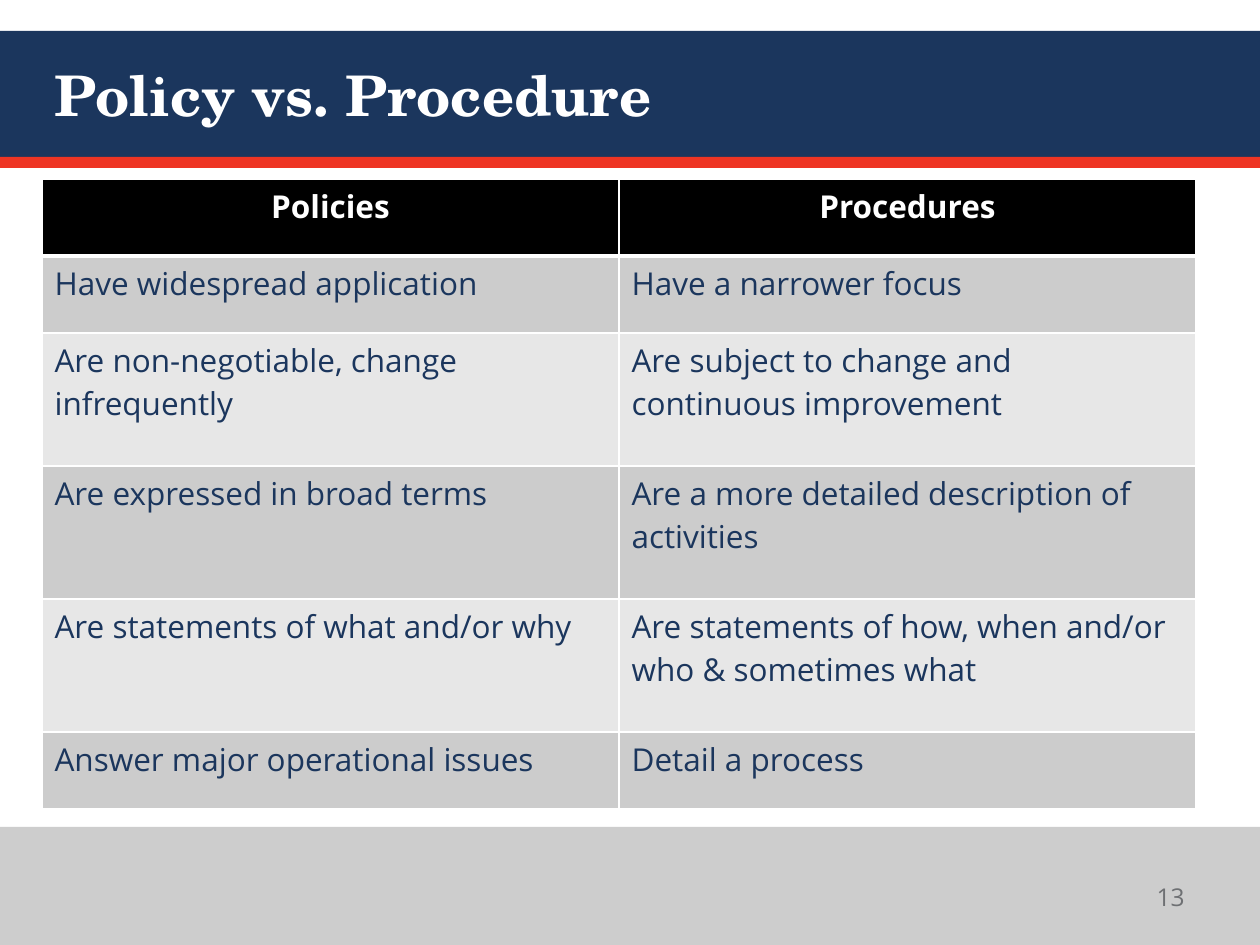
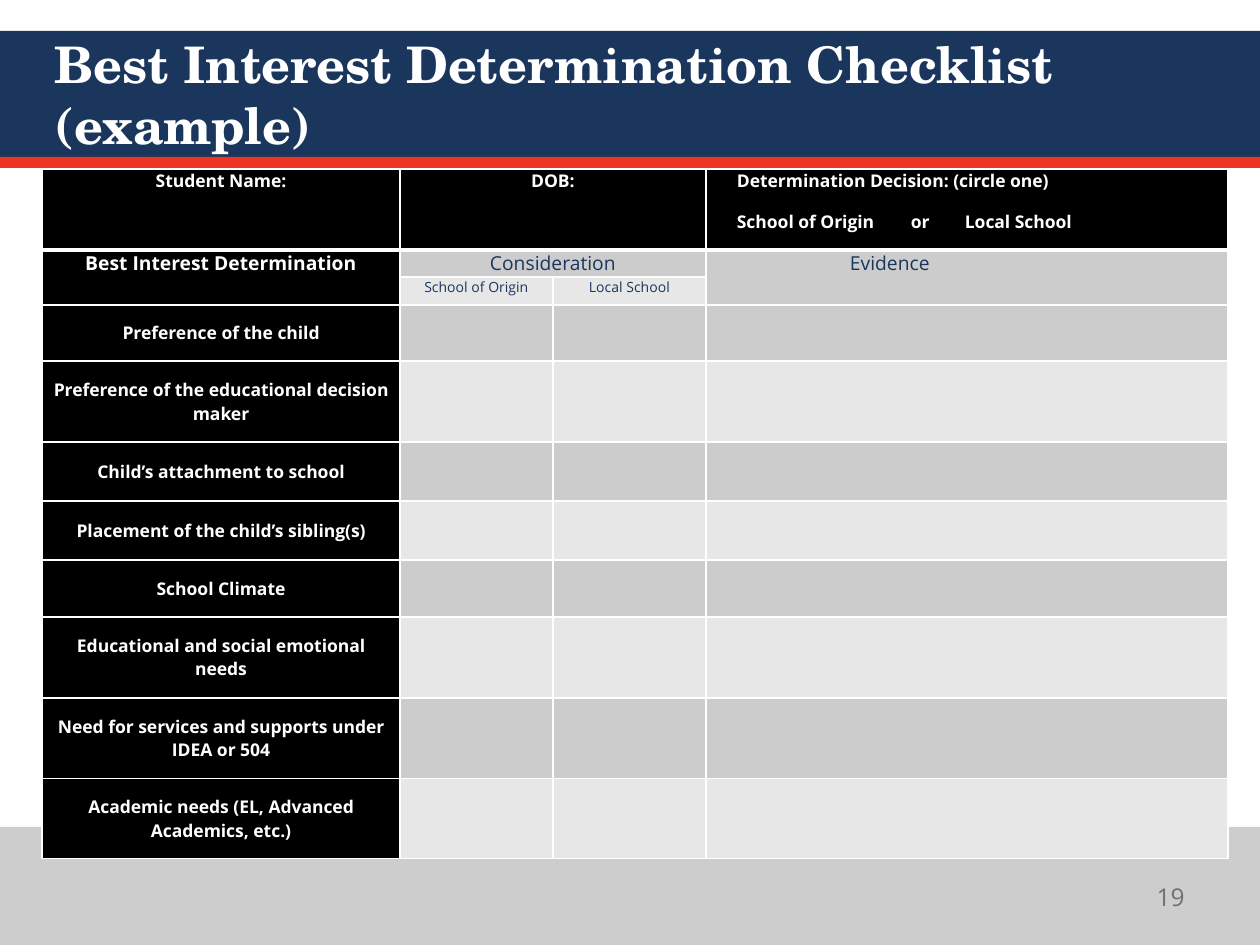
from dataclasses import dataclass

from lxml.etree import SubElement
from pptx import Presentation
from pptx.dml.color import RGBColor
from pptx.enum.shapes import MSO_SHAPE
from pptx.enum.text import MSO_ANCHOR, MSO_AUTO_SIZE, PP_ALIGN
from pptx.oxml.ns import qn
from pptx.util import Pt

# ---- Content ----
POLICY_TITLE = "Policy vs. Procedure"
POLICY_ROWS = [
    ("Policies", "Procedures"),
    ("Have widespread application", "Have a narrower focus"),
    ("Are non-negotiable, change infrequently",
     "Are subject to change and continuous improvement"),
    ("Are expressed in broad terms", "Are a more detailed description of activities"),
    ("Are statements of what and/or why",
     "Are statements of how, when and/or who & sometimes what"),
    ("Answer major operational issues", "Detail a process"),
]
CHECKLIST_TITLE = "Best Interest Determination Checklist (example)"
STUDENT_FIELDS = {0: "Student Name:", 1: "DOB:"}
DECISION_LINES = ["Determination Decision: (circle one)",
                  "School of Origin\tor\tLocal School"]
CRITERIA_HEADING = "Best Interest Determination"
CONSIDERATION_HEADING = "Consideration"
EVIDENCE_HEADING = "Evidence"
SCHOOLS = ["School of Origin", "Local School"]
CRITERIA = [
    "Preference of the child",
    "Preference of the educational decision maker",
    "Child’s attachment to school",
    "Placement of the child’s sibling(s)",
    "School Climate",
    "Educational and social emotional needs",
    "Need for services and supports under IDEA or 504",
    "Academic needs (EL, Advanced Academics, etc.)",
]


# ---- Theme and layout, lengths in px ----
@dataclass(frozen=True)
class Theme:
    navy: str = "1B365D"
    red: str = "EE3524"
    footer_gray: str = "CDCDCD"
    number_gray: str = "6E7073"
    black: str = "000000"
    white: str = "FFFFFF"
    row_dark: str = "CCCCCC"
    row_light: str = "E7E7E7"
    title_font: str = "TeX Gyre Schola"
    body_font: str = "Open Sans"
    title_size: float = 32
    long_title_size: float = 28.8
    number_size: float = 14
    table_size: float = 18
    heading_size: float = 11
    label_size: float = 10
    school_size: float = 8
    border: float = 1
    header_border: float = 3


THEME = Theme()
PX_PER_INCH = 126
SLIDE_WIDTH, SLIDE_HEIGHT = 1260, 945
BANDS = [(31, 126, THEME.navy), (827, 118, THEME.footer_gray), (157, 11, THEME.red)]
TITLE_BOX = (42, 31, 1144, 126)
NUMBER_BOX = (1134, 876, 63, 50)
POLICY_WIDTHS = [577, 577]
POLICY_HEIGHTS = [77, 77, 133, 133, 133, 77]
CHECKLIST_WIDTHS = [358, 153, 153, 522]
CHECKLIST_HEIGHTS = [81, 27, 28, 56, 81, 59, 59, 57, 81, 81, 80]
CELL_MARGIN = 8
DECISION_INDENT, EVIDENCE_INDENT = 31, 144
DECISION_TABS = [174, 228]


def px(length):
    return round(length * 914400 / PX_PER_INCH)


def place(shape, box):
    shape.left, shape.top, shape.width, shape.height = map(px, box)


def set_font(paragraph, size, color, bold=False, name=THEME.body_font):
    font = paragraph.font
    font.size, font.bold, font.name = Pt(size), bold, name
    font.color.rgb = RGBColor.from_string(color)


# ---- Shared slide parts ----
def add_bands(slide, layout):
    """Draw the bands and move them behind everything on the layout."""
    for index, (top, height, color) in enumerate(BANDS):
        band = slide.shapes.add_shape(
            MSO_SHAPE.RECTANGLE, 0, px(top), px(SLIDE_WIDTH), px(height))
        band.shadow.inherit = False
        band.fill.solid()
        band.fill.fore_color.rgb = RGBColor.from_string(color)
        band.line.fill.background()
        layout.shapes.element.insert(2 + index, band.element)


def add_slide(presentation, layout, title, title_size, number):
    slide = presentation.slides.add_slide(layout)
    shape = slide.shapes.title
    place(shape, TITLE_BOX)
    frame = shape.text_frame
    frame.text = title
    frame.word_wrap = True
    frame.auto_size = MSO_AUTO_SIZE.NONE
    frame.vertical_anchor = MSO_ANCHOR.MIDDLE
    paragraph = frame.paragraphs[0]
    paragraph.alignment = PP_ALIGN.LEFT
    set_font(paragraph, title_size, THEME.white, True, THEME.title_font)

    number_box = slide.shapes.add_textbox(*map(px, NUMBER_BOX))
    number_box.text_frame.word_wrap = True
    paragraph = number_box.text_frame.paragraphs[0]
    paragraph.text = str(number)
    paragraph.alignment = PP_ALIGN.RIGHT
    set_font(paragraph, THEME.number_size, THEME.number_gray)
    return slide


# ---- Tables ----
def set_borders(cell, top, bottom):
    properties = cell._tc.get_or_add_tcPr()
    widths = {"a:lnL": THEME.border, "a:lnR": THEME.border, "a:lnT": top, "a:lnB": bottom}
    for tag, width in widths.items():
        line = SubElement(properties, qn(tag), w=str(Pt(width)))
        fill = SubElement(line, qn("a:solidFill"))
        SubElement(fill, qn("a:srgbClr"), val=THEME.white)


def add_table(slide, left, top, widths, heights, black_columns=0):
    """Add a table with a black header row, banded rows and white borders."""
    table = slide.shapes.add_table(
        len(heights), len(widths), px(left), px(top), px(sum(widths)), px(sum(heights))).table
    table.first_row = table.horz_banding = False
    for column, width in zip(table.columns, widths):
        column.width = px(width)
    for row_index, (row, height) in enumerate(zip(table.rows, heights)):
        row.height = px(height)
        band = THEME.row_dark if row_index % 2 else THEME.row_light
        for column_index, cell in enumerate(row.cells):
            set_borders(cell,
                        THEME.header_border if row_index == 1 else THEME.border,
                        THEME.header_border if row_index == 0 else THEME.border)
            black = row_index == 0 or column_index < black_columns
            cell.fill.solid()
            cell.fill.fore_color.rgb = RGBColor.from_string(THEME.black if black else band)
    return table


def write_cell(cell, text, size, header=False, alignment=PP_ALIGN.CENTER):
    paragraph = cell.text_frame.paragraphs[0]
    paragraph.text = text
    paragraph.alignment = alignment
    set_font(paragraph, size, THEME.white if header else THEME.navy, header)


def write_decision(cell):
    cell.margin_left = px(DECISION_INDENT)
    frame = cell.text_frame
    for index, text in enumerate(DECISION_LINES):
        paragraph = frame.add_paragraph() if index else frame.paragraphs[0]
        paragraph.text = text
        paragraph.alignment = PP_ALIGN.LEFT
        if index:
            paragraph.space_before = Pt(10)
        if "\t" in text:
            tabs = SubElement(paragraph._p.get_or_add_pPr(), qn("a:tabLst"))
            for stop in DECISION_TABS:
                SubElement(tabs, qn("a:tab"), pos=str(px(stop)), algn="l")
        set_font(paragraph, THEME.label_size, THEME.white, True)


def fill_policy_table(slide):
    table = add_table(slide, 42, 179, POLICY_WIDTHS, POLICY_HEIGHTS)
    for row_index, texts in enumerate(POLICY_ROWS):
        header = row_index == 0
        for column_index, text in enumerate(texts):
            write_cell(table.cell(row_index, column_index), text, THEME.table_size, header,
                       PP_ALIGN.CENTER if header else PP_ALIGN.LEFT)


def fill_checklist_table(slide):
    table = add_table(slide, 42, 169, CHECKLIST_WIDTHS, CHECKLIST_HEIGHTS, black_columns=1)
    for cell in table.iter_cells():
        cell.margin_left = cell.margin_right = px(CELL_MARGIN)
        cell.margin_top = cell.margin_bottom = 0
    for start, end in [((0, 1), (0, 2)), ((1, 0), (2, 0)), ((1, 1), (1, 2)), ((1, 3), (2, 3))]:
        table.cell(*start).merge(table.cell(*end))

    # Student details and headings
    for column, text in STUDENT_FIELDS.items():
        write_cell(table.cell(0, column), text, THEME.label_size, True)
    write_decision(table.cell(0, 3))
    write_cell(table.cell(1, 0), CRITERIA_HEADING, THEME.heading_size, True)
    write_cell(table.cell(1, 1), CONSIDERATION_HEADING, THEME.heading_size)
    evidence = table.cell(1, 3)
    evidence.margin_left = px(EVIDENCE_INDENT)
    write_cell(evidence, EVIDENCE_HEADING, THEME.heading_size, alignment=PP_ALIGN.LEFT)
    for column, school in enumerate(SCHOOLS, start=1):
        write_cell(table.cell(2, column), school, THEME.school_size)

    # Criteria to check
    for row, criterion in enumerate(CRITERIA, start=3):
        cell = table.cell(row, 0)
        cell.vertical_anchor = MSO_ANCHOR.MIDDLE
        write_cell(cell, criterion, THEME.label_size, True)


def main():
    presentation = Presentation()
    presentation.slide_width, presentation.slide_height = px(SLIDE_WIDTH), px(SLIDE_HEIGHT)
    layout = presentation.slide_layouts.get_by_name("Title Only")

    policy_slide = add_slide(presentation, layout, POLICY_TITLE, THEME.title_size, 13)
    add_bands(policy_slide, layout)
    fill_policy_table(policy_slide)

    checklist_slide = add_slide(
        presentation, layout, CHECKLIST_TITLE, THEME.long_title_size, 19)
    fill_checklist_table(checklist_slide)
    presentation.save("out.pptx")


if __name__ == "__main__":
    main()
